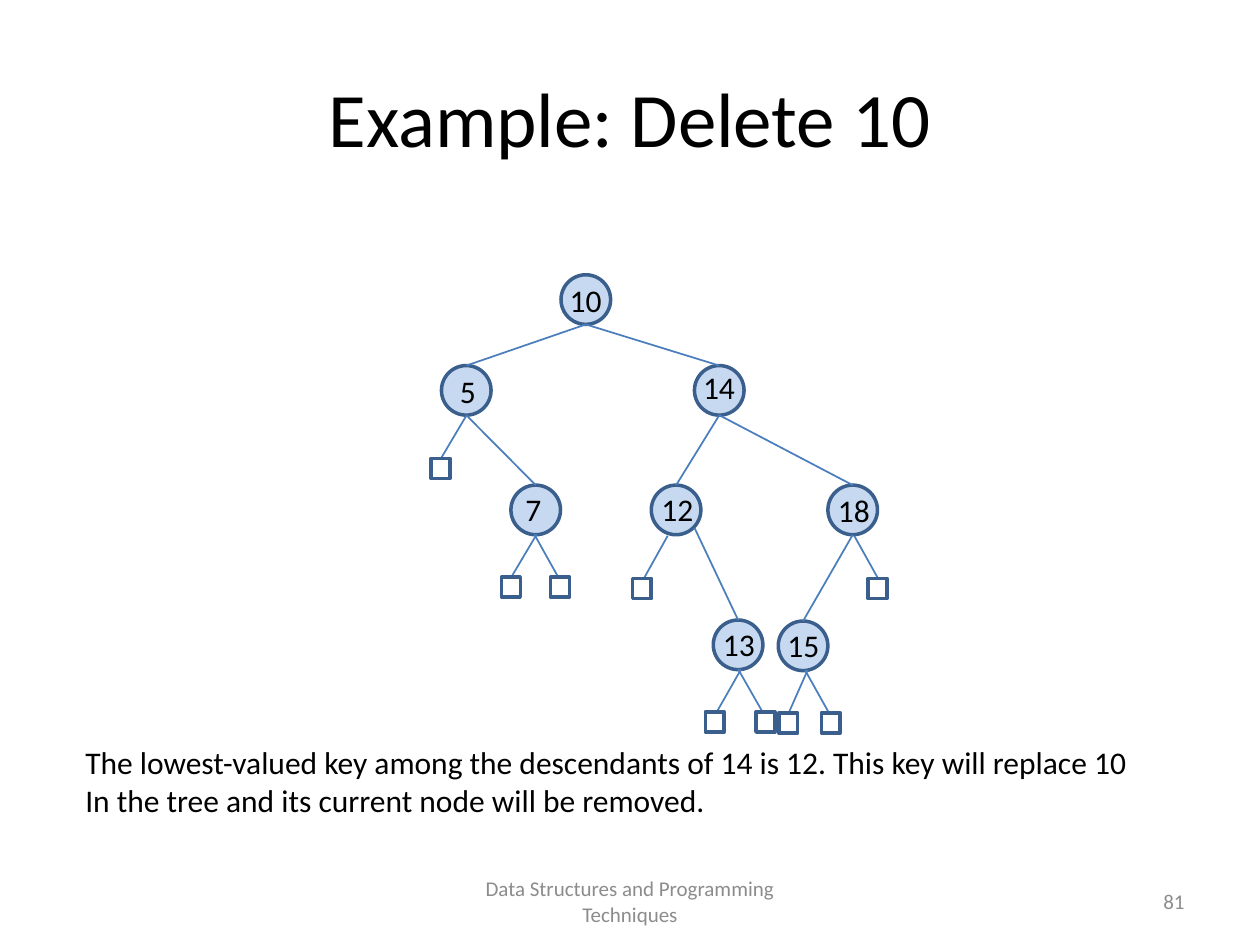
"""Build a slide showing a binary search tree before the key 10 is deleted."""
from dataclasses import dataclass

import lxml.etree
import pptx
import pptx.dml.color
import pptx.enum.shapes
import pptx.enum.text
import pptx.oxml.ns
import pptx.util

Cm = pptx.util.Cm
Align = pptx.enum.text.PP_ALIGN
Anchor = pptx.enum.text.MSO_ANCHOR
Preset = pptx.enum.shapes.MSO_SHAPE

FONT = "Calibri"
BLACK, GREY = "000000", "8C8C8C"
NODE_FILL, OUTLINE, EDGE = "C6D9F1", "3A5F8C", "4B7EBC"
NODE_SIZE = 1.0
LABEL_WIDTH, LABEL_HEIGHT = 1.35, 1.02
LEAF_WIDTH, LEAF_HEIGHT, STEM_DROP = 0.38, 0.41, 0.86


@dataclass
class Node:
    """A keyed circle and the corner of its label, in centimetres."""
    left: float
    top: float
    label_left: float
    label_top: float

    @property
    def head(self) -> tuple[float, float]:
        return self.left + NODE_SIZE / 2, self.top

    @property
    def foot(self) -> tuple[float, float]:
        return self.left + NODE_SIZE / 2, self.top + NODE_SIZE


@dataclass
class Leaf:
    """An empty subtree: a slanted stem and a square, in centimetres."""
    stem_x: float
    stem_y: float
    end_x: float
    left: float


NODES = {
    "10": Node(11.31, 5.54, 11.13, 5.54),
    "5": Node(8.9, 7.37, 8.76, 7.37),
    "14": Node(14, 7.37, 13.82, 7.29),
    "7": Node(10.3, 9.78, 10.08, 9.75),
    "12": Node(13.13, 9.78, 12.98, 9.75),
    "18": Node(16.69, 9.78, 16.54, 9.78),
    "15": Node(15.69, 12.52, 15.52, 12.5),
    "13": Node(14.38, 12.5, 14.22, 12.47),
}
BRANCHES = [("10", "5"), ("10", "14"), ("5", "7"),
            ("14", "12"), ("14", "18"), ("18", "15")]
SIDE_BRANCH_START = (14, 10.64)
LEAVES = [
    Leaf(10.82, 10.77, 10.31, 10.11),
    Leaf(10.77, 10.77, 11.25, 11.1),
    Leaf(9.4, 8.38, 8.89, 8.69),
    Leaf(13.46, 10.8, 12.98, 12.75),
    Leaf(17.22, 10.8, 17.7, 17.5),
    Leaf(14.94, 13.49, 14.45, 14.22),
    Leaf(14.88, 13.49, 15.37, 15.24),
    Leaf(16.28, 13.51, 15.9, 15.7),
    Leaf(16.23, 13.51, 16.71, 16.56),
]


def colour(value: str) -> pptx.dml.color.RGBColor:
    """Turn a hex string into a colour."""
    return pptx.dml.color.RGBColor.from_string(value)


def write(frame, text: str, size: int, ink: str, align) -> None:
    """Set the text of a frame and format its runs."""
    frame.text = text
    for para in frame.paragraphs:
        para.alignment = align
        for span in para.runs:
            span.font.name = FONT
            span.font.size = pptx.util.Pt(size)
            span.font.color.rgb = colour(ink)


def add_text(page, left: float, top: float, width: float, height: float, text: str,
             size: int = 18, ink: str = BLACK, align=Align.CENTER, grow: bool = True):
    """Add a wrapping text box and return it."""
    box = page.shapes.add_textbox(Cm(left), Cm(top), Cm(width), Cm(height))
    frame = box.text_frame
    write(frame, text, size, ink, align)
    frame.word_wrap = True
    if grow:
        frame.auto_size = pptx.enum.text.MSO_AUTO_SIZE.SHAPE_TO_FIT_TEXT
    else:
        frame.vertical_anchor = Anchor.MIDDLE
    return box


def add_outlined(page, preset, left: float, top: float, width: float, height: float,
                 fill: str = "") -> None:
    """Add an outlined shape, filled only when a colour is given."""
    shape = page.shapes.add_shape(preset, Cm(left), Cm(top), Cm(width), Cm(height))
    shape.shadow.inherit = False
    if fill:
        shape.fill.solid()
        shape.fill.fore_color.rgb = colour(fill)
    else:
        shape.fill.background()
    shape.line.color.rgb = colour(OUTLINE)
    shape.line.width = pptx.util.Pt(2)


def add_edge(page, start: tuple[float, float], end: tuple[float, float]) -> None:
    """Add a plain straight line between two points."""
    line = page.shapes.add_connector(pptx.enum.shapes.MSO_CONNECTOR.STRAIGHT,
                                     *map(Cm, start + end))
    line.line.color.rgb = colour(EDGE)
    line.line.width = pptx.util.Pt(1)
    lxml.etree.SubElement(line.element.spPr, pptx.oxml.ns.qn("a:effectLst"))


def add_leaf(page, leaf: Leaf) -> None:
    """Add the stem and the square of an empty subtree."""
    bottom = leaf.stem_y + STEM_DROP
    add_edge(page, (leaf.stem_x, leaf.stem_y), (leaf.end_x, bottom))
    add_outlined(page, Preset.RECTANGLE, leaf.left, bottom, LEAF_WIDTH, LEAF_HEIGHT)


def main() -> None:
    """Build and save the deck."""
    deck = pptx.Presentation()
    deck.slide_width, deck.slide_height = Cm(25.4), Cm(19.05)
    page = deck.slides.add_slide(deck.slide_layouts[5])

    title = page.shapes.title
    title.left, title.top, title.width, title.height = map(Cm, (1.27, 0.76, 22.86, 3.18))
    title.text_frame.vertical_anchor = Anchor.MIDDLE
    write(title.text_frame, "Example: Delete 10", 44, BLACK, Align.CENTER)

    add_text(page, 8.68, 17.66, 8.04, 1.01, "Data Structures and Programming Techniques",
             12, GREY, grow=False)
    add_text(page, 18.2, 17.66, 5.93, 1.01, "81", 12, GREY, Align.RIGHT, grow=False)

    for node in NODES.values():
        add_outlined(page, Preset.OVAL, node.left, node.top, NODE_SIZE, NODE_SIZE, NODE_FILL)
    for parent, child in BRANCHES:
        add_edge(page, NODES[parent].foot, NODES[child].head)
    add_edge(page, SIDE_BRANCH_START, NODES["13"].head)
    for key, node in NODES.items():
        add_text(page, node.label_left, node.label_top, LABEL_WIDTH, LABEL_HEIGHT, key)

    add_text(page, 1.47, 14.86, 22, 1.8,
             "The lowest-valued key among the descendants of 14 is 12. "
             "This key will replace 10\n"
             "In the tree and its current node will be removed.", align=Align.LEFT)
    for leaf in LEAVES:
        add_leaf(page, leaf)

    deck.save("out.pptx")


if __name__ == "__main__":
    main()
